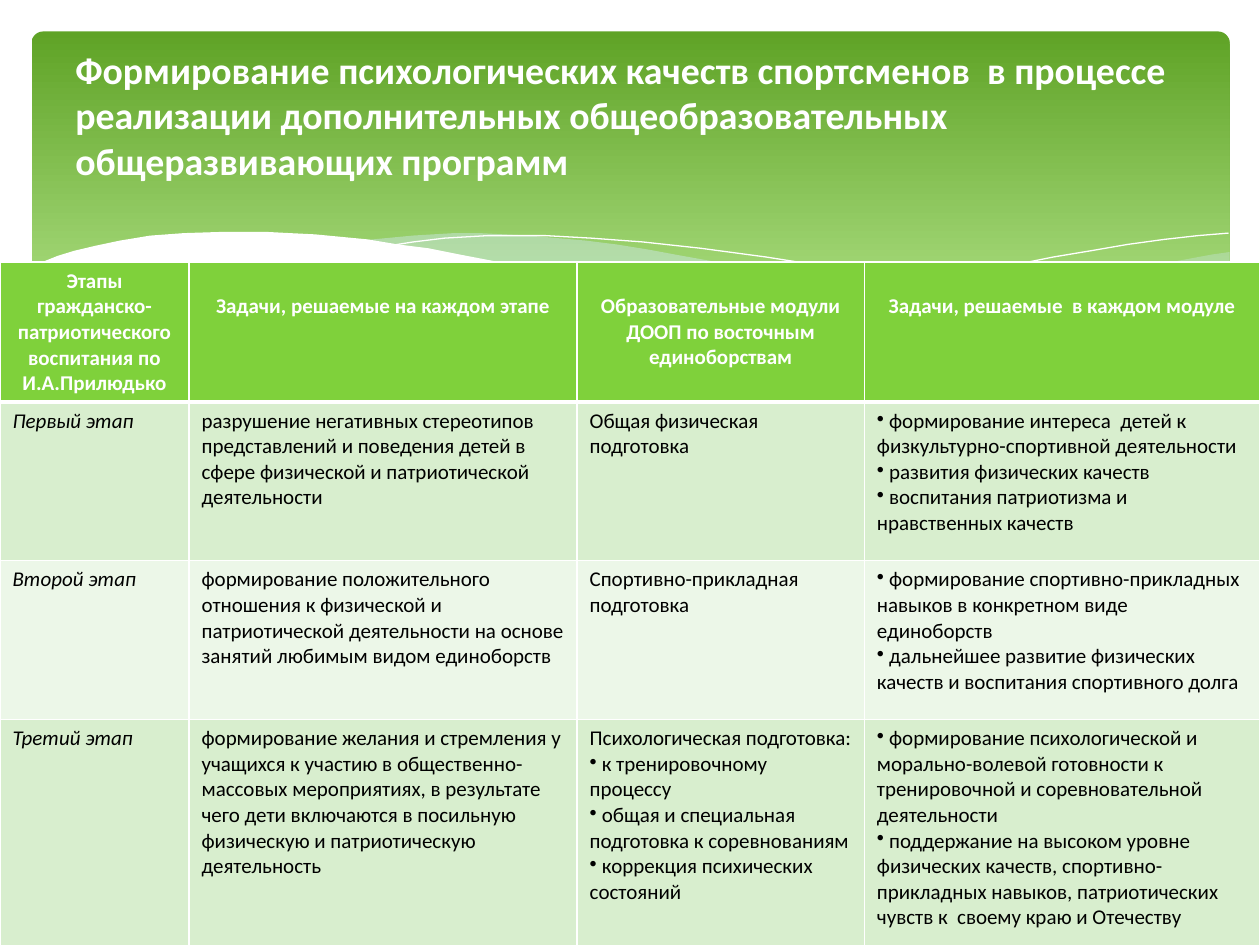
"""Build a slide on shaping athletes' psychological qualities, stage by stage."""
from lxml.etree import SubElement
from pptx import Presentation
from pptx.dml.color import RGBColor
from pptx.enum.shapes import MSO_SHAPE
from pptx.enum.text import MSO_ANCHOR, PP_ALIGN
from pptx.oxml.ns import qn
from pptx.util import Inches, Pt


def color(value):
    return RGBColor.from_string(value)


def add_span(para, text, size, value, bold=False, italic=False):
    span = para.add_run()
    span.text = text
    span.font.name = "Calibri"
    span.font.size = Pt(size)
    span.font.bold = bold
    span.font.italic = italic
    span.font.color.rgb = color(value)


deck = Presentation()
deck.slide_width, deck.slide_height = Inches(10), Inches(7.5)
page = deck.slides.add_slide(deck.slide_layouts[6])

banner = page.shapes.add_shape(
    MSO_SHAPE.ROUNDED_RECTANGLE, Inches(0.25), Inches(0.25), Inches(9.51), Inches(2.7))
banner.adjustments[0] = 0.034
banner.shadow.inherit = False
banner.line.fill.background()
banner.fill.gradient()
banner.fill.gradient_angle = 270
for stop, position, value in zip(banner.fill.gradient_stops, (0, 0.9), ("5FA326", "B2E389")):
    stop.position = position
    stop.color.rgb = color(value)

right_wave = [
    (9.76, 2), (9.62, 2.02), (9.35, 2.07), (9.06, 2.13), (8.61, 2.23), (8.05, 2.37),
    (7.53, 2.48), (7.06, 2.57), (6.61, 2.65), (6.91, 2.69), (7.32, 2.74), (7.69, 2.77),
    (8.03, 2.78), (8.44, 2.77), (8.81, 2.73), (9.13, 2.67), (9.42, 2.59), (9.76, 2.47)]
middle_wave = [
    (8.93, 2.73), (8.37, 2.65), (7.75, 2.54), (7.06, 2.4), (6.29, 2.22), (5.98, 2.14),
    (5.69, 2.08), (5.41, 2.03), (5.14, 1.98), (4.89, 1.94), (4.65, 1.91), (4.42, 1.89),
    (4.2, 1.87), (3.99, 1.86), (3.8, 1.85), (3.61, 1.85), (3.28, 1.87), (2.86, 1.91),
    (3.23, 1.96), (3.62, 2.03), (4.04, 2.11), (4.49, 2.22), (5.3, 2.4), (6.01, 2.55),
    (6.65, 2.66), (7.22, 2.74), (7.73, 2.77), (8.18, 2.78), (8.57, 2.77), (8.93, 2.73)]
long_line = [
    (3.09, 1.95), (3.28, 1.92), (3.53, 1.89), (3.87, 1.87), (4.33, 1.87), (4.69, 1.89),
    (5.1, 1.92), (5.56, 1.97), (6.08, 2.04), (6.65, 2.13), (7.27, 2.26), (7.95, 2.41),
    (8.69, 2.61), (9.07, 2.72)]
short_line = [
    (6.13, 2.57), (6.53, 2.46), (6.95, 2.35), (7.48, 2.23), (8.06, 2.1), (8.36, 2.04),
    (8.66, 1.99), (8.95, 1.94), (9.24, 1.9), (9.51, 1.87), (9.75, 1.85)]
white_wave = [
    (9.77, 2.46), (9.5, 2.56), (9.2, 2.65), (8.87, 2.71), (8.5, 2.75), (8.09, 2.77),
    (7.61, 2.75), (7.08, 2.7), (6.48, 2.62), (5.79, 2.5), (5.03, 2.33), (4.47, 2.2),
    (4.18, 2.13), (3.91, 2.07), (3.65, 2.02), (3.4, 1.97), (3.16, 1.94), (2.92, 1.9),
    (2.71, 1.88), (2.5, 1.86), (2.3, 1.85), (2.11, 1.84), (1.77, 1.84), (1.46, 1.85),
    (1.19, 1.87), (0.95, 1.91), (0.76, 1.95), (0.59, 1.99), (0.46, 2.03), (0.36, 2.07),
    (0.23, 2.13), (0.23, 3.29), (9.77, 3.29)]
waves = [(right_wave, "D6ECFF", 29), (middle_wave, "D6ECFF", 40), (long_line, None, 0),
         (short_line, None, 0), (white_wave, "FFFFFF", 100)]
for points, value, opacity in waves:
    corners = [(Inches(x), Inches(y)) for x, y in points]
    builder = page.shapes.build_freeform(*corners[0])
    builder.add_line_segments(corners[1:], close=value is not None)
    wave = builder.convert_to_shape()
    wave.shadow.inherit = False
    if value is None:
        wave.fill.background()
        wave.line.color.rgb = color("FFFFFF")
        wave.line.width = Pt(0)
        continue
    wave.line.fill.background()
    wave.fill.solid()
    wave.fill.fore_color.rgb = color(value)
    if opacity < 100:
        tint = wave.fill._xPr.find(".//" + qn("a:srgbClr"))
        SubElement(tint, qn("a:alpha"), val=str(opacity * 1000))

title = page.shapes.add_textbox(Inches(0.5), Inches(0.37), Inches(9), Inches(1.37))
title.text_frame.word_wrap = True
title.text_frame.margin_top = 0
add_span(title.text_frame.paragraphs[0],
         "Формирование психологических качеств спортсменов  в процессе реализации "
         "дополнительных общеобразовательных общеразвивающих программ",
         21.6, "FFFFFF", bold=True)

rows = [
    [["Этапы гражданско-патриотического воспитания по И.А.Прилюдько"],
     ["Задачи, решаемые на каждом этапе"],
     ["Образовательные модули ДООП по восточным единоборствам"],
     ["Задачи, решаемые  в каждом модуле"]],
    [["Первый этап"],
     ["разрушение негативных стереотипов представлений и поведения детей в сфере "
      "физической и патриотической деятельности"],
     ["Общая физическая подготовка"],
     ["• формирование интереса  детей к физкультурно-спортивной деятельности",
      "• развития физических качеств",
      "• воспитания патриотизма и нравственных качеств"]],
    [["Второй этап"],
     ["формирование положительного отношения к физической и патриотической "
      "деятельности на основе занятий любимым видом единоборств"],
     ["Спортивно-прикладная подготовка"],
     ["• формирование спортивно-прикладных навыков в конкретном виде единоборств",
      "• дальнейшее развитие физических качеств и воспитания спортивного долга"]],
    [["Третий этап"],
     ["формирование желания и стремления у учащихся к участию в общественно-массовых "
      "мероприятиях, в результате чего дети включаются "
      "в посильную физическую и патриотическую деятельность"],
     ["Психологическая подготовка:",
      "• к тренировочному процессу",
      "• общая и специальная подготовка к соревнованиям",
      "• коррекция психических состояний"],
     ["• формирование психологической и морально-волевой готовности к тренировочной "
      "и соревновательной деятельности",
      "• поддержание на высоком уровне физических качеств, спортивно-прикладных "
      "навыков, патриотических чувств к  своему краю и Отечеству"]],
]
row_fills = ["7FD13B", "D8EECE", "ECF7E8", "D8EECE"]
row_heights = [1.11, 1.26, 1.26, 1.84]
column_widths = [1.5, 3.08, 2.28, 3.14]

table = page.shapes.add_table(
    4, 4, Inches(0), Inches(2.08), Inches(10), Inches(sum(row_heights))).table
for column, width in zip(table.columns, column_widths):
    column.width = Inches(width)
for row, height in zip(table.rows, row_heights):
    row.height = Inches(height)

for row_index, row in enumerate(rows):
    header = row_index == 0
    for column_index, lines in enumerate(row):
        cell = table.cell(row_index, column_index)
        if header and column_index > 0:
            cell.margin_top = Inches(0.25)
        cell.vertical_anchor = MSO_ANCHOR.TOP
        thick_edge = {0: "lnB", 1: "lnT"}.get(row_index)
        for edge in ("lnL", "lnR", "lnT", "lnB"):
            width = Pt(3 if edge == thick_edge else 1)
            border = SubElement(cell._tc.get_or_add_tcPr(), qn("a:" + edge), w=str(width))
            SubElement(SubElement(border, qn("a:solidFill")), qn("a:srgbClr"), val="FFFFFF")
        cell.fill.solid()
        cell.fill.fore_color.rgb = color(row_fills[row_index])
        for line_index, line in enumerate(lines):
            frame = cell.text_frame
            para = frame.add_paragraph() if line_index else frame.paragraphs[0]
            para.alignment = PP_ALIGN.CENTER if header else PP_ALIGN.LEFT
            if line.startswith("•"):
                SubElement(para._p.get_or_add_pPr(), qn("a:buChar"), char="•")
            add_span(para, line.removeprefix("•"), 12, "FFFFFF" if header else "000000",
                     bold=header, italic=not header and column_index == 0)

deck.save("out.pptx")
